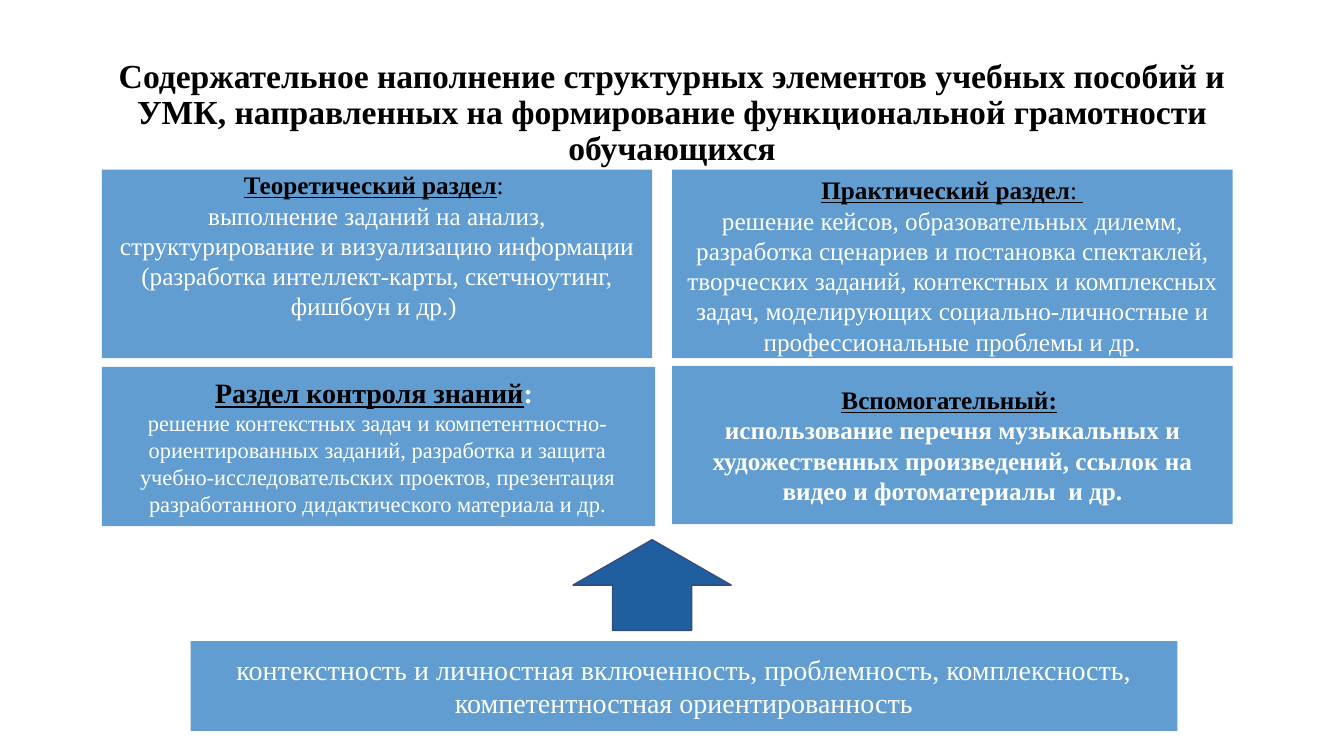
"""Slide on the content of study guide sections that build functional literacy."""
from pptx import Presentation
from pptx.dml.color import RGBColor
from pptx.enum.shapes import MSO_SHAPE
from pptx.enum.text import MSO_ANCHOR, MSO_AUTO_SIZE, PP_ALIGN
from pptx.util import Pt

RECT, ARROW = MSO_SHAPE.RECTANGLE, MSO_SHAPE.RIGHT_ARROW
TOP, MIDDLE = MSO_ANCHOR.TOP, MSO_ANCHOR.MIDDLE
NO_FIT = MSO_AUTO_SIZE.NONE
CENTER = PP_ALIGN.CENTER
FONT = "Times New Roman"
BLACK, WHITE, BLUE, DARK_BLUE, EDGE = "000000", "FFFFFF", "629DD1", "1F5FA0", "374B7F"


def paint(fmt, color):
    fmt.solid()
    fmt.fore_color.rgb = RGBColor.from_string(color)


def write(tf, anchor, paragraphs):
    tf.word_wrap = True
    tf.auto_size = NO_FIT
    tf.vertical_anchor = anchor
    for i, runs in enumerate(paragraphs):
        p = tf.paragraphs[0] if i == 0 else tf.add_paragraph()
        p.alignment = CENTER
        for text, size, color, bold, underline in runs:
            r = p.add_run()
            r.text = text
            r.font.name = FONT
            r.font.size = Pt(size)
            r.font.bold = bold
            r.font.underline = underline
            paint(r.font.fill, color)


prs = Presentation()
prs.slide_width, prs.slide_height = Pt(960), Pt(540)
s = prs.slides.add_slide(prs.slide_layouts[5])

title = s.shapes.title
title.left, title.top, title.width, title.height = Pt(66), Pt(28.8), Pt(828), Pt(104.4)
write(title.text_frame, MIDDLE, [[(
    "Содержательное наполнение структурных элементов учебных пособий и УМК, "
    "направленных на формирование функциональной грамотности обучающихся",
    24, BLACK, True, False)]])
title.text_frame.paragraphs[0].line_spacing = 0.9

boxes = [
    (72.7, 121.2, 393.1, 134.6, TOP, 0, [
        [("Теоретический раздел", 18, BLACK, True, True), (": ", 18, BLACK, False, False)],
        [("выполнение заданий на анализ, структурирование и визуализацию информации "
          "(разработка интеллект-карты, скетчноутинг, фишбоун и др.) ",
          18, WHITE, False, False)]]),
    (480.2, 121.2, 400.3, 134.6, TOP, 3.6, [
        [("Практический раздел", 18, BLACK, True, True), (": ", 18, BLACK, False, True)],
        [("решение кейсов, образовательных дилемм, разработка сценариев и постановка "
          "спектаклей, творческих заданий, контекстных и комплексных задач, моделирующих "
          "социально-личностные и профессиональные проблемы и др.",
          18, WHITE, False, False)]]),
    (72.7, 262.1, 395.3, 113.8, MIDDLE, 3.6, []),
    (480.2, 261.4, 400.3, 113, MIDDLE, 3.6, [
        [("Вспомогательный:", 18, BLACK, True, True), (" ", 18, BLACK, True, False)],
        [("использование перечня музыкальных и художественных произведений, ссылок на "
          "видео и фотоматериалы  и др.", 18, WHITE, True, False)]]),
    (136.1, 457.9, 704.9, 64.1, MIDDLE, 3.6, [
        [("контекстность и личностная включенность, проблемность, комплексность, "
          "компетентностная ориентированность", 20, WHITE, False, False)]]),
]
for x, y, w, h, anchor, inset, paragraphs in boxes:
    sp = s.shapes.add_shape(RECT, Pt(x), Pt(y), Pt(w), Pt(h))
    sp.shadow.inherit = False
    paint(sp.fill, BLUE)
    sp.line.fill.background()
    sp.text_frame.margin_top = Pt(inset)
    write(sp.text_frame, anchor, paragraphs)

control = s.shapes.add_textbox(Pt(78.5), Pt(265), Pt(382.3), Pt(108.7))
write(control.text_frame, TOP, [
    [("Раздел контроля знаний", 20, BLACK, True, True), (": ", 20, WHITE, True, False)],
    [("решение контекстных задач и компетентностно-ориентированных заданий, разработка "
      "и защита учебно-исследовательских проектов, презентация разработанного "
      "дидактического материала и др.", 16, WHITE, False, False)]])

arrow = s.shapes.add_shape(ARROW, Pt(433.4), Pt(361.4), Pt(64.8), Pt(113))
arrow.rotation = 270
arrow.shadow.inherit = False
paint(arrow.fill, DARK_BLUE)
paint(arrow.line.fill, EDGE)
arrow.line.width = Pt(1)

prs.save("out.pptx")
